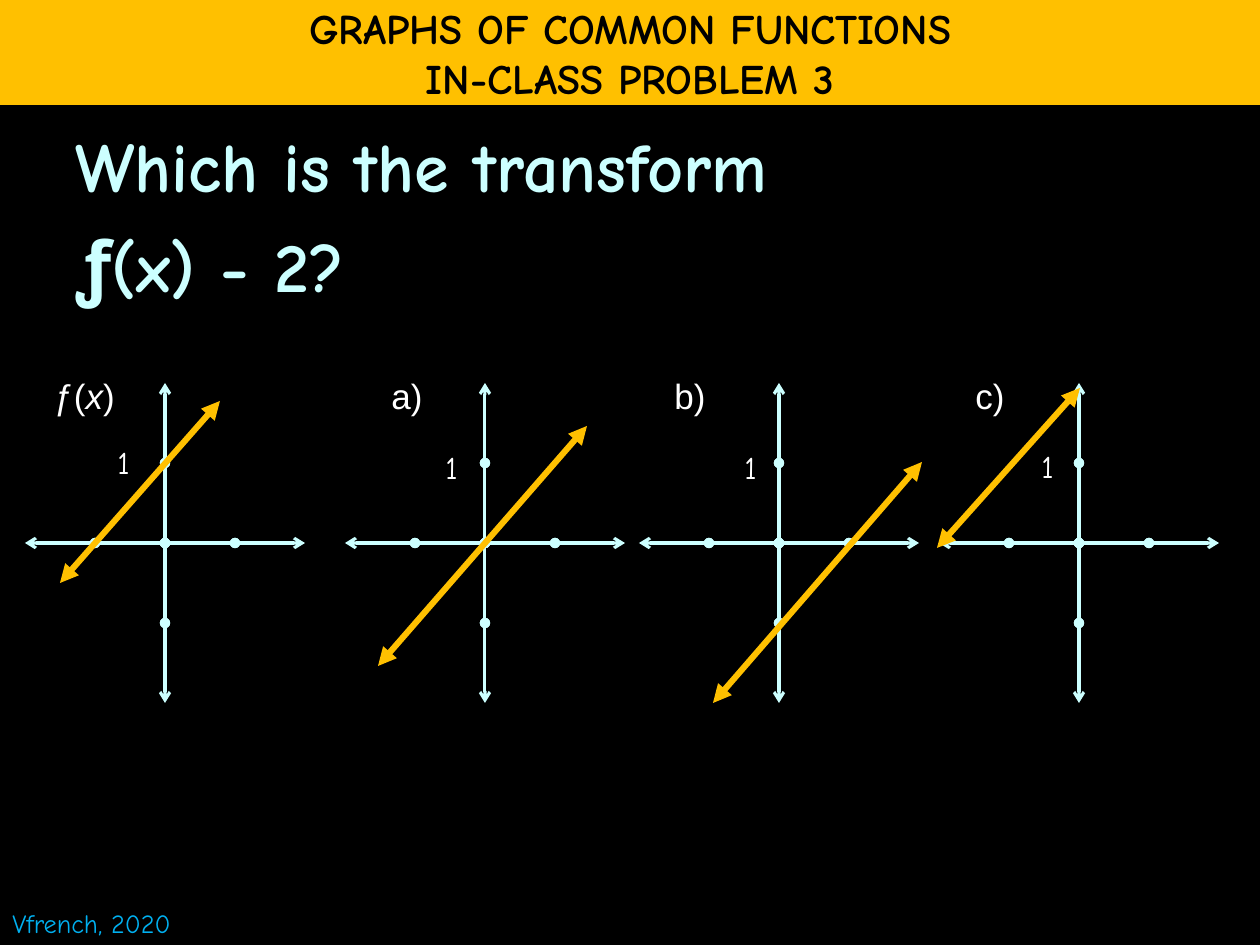
from dataclasses import dataclass
from typing import Any

from lxml.etree import SubElement
from pptx import Presentation
from pptx.dml.color import RGBColor
from pptx.enum.shapes import MSO_CONNECTOR as Link
from pptx.enum.text import MSO_ANCHOR as Anchor
from pptx.enum.text import MSO_AUTO_SIZE as Fit
from pptx.enum.text import PP_ALIGN as Align
from pptx.oxml.ns import qn
from pptx.util import Emu, Pt

BLACK = RGBColor(0x00, 0x00, 0x00)
WHITE = RGBColor(0xFF, 0xFF, 0xFF)
GOLD = RGBColor(0xFF, 0xC0, 0x00)
ICE = RGBColor(0xCC, 0xFF, 0xFF)
BLUE = RGBColor(0x00, 0xB0, 0xF0)

SCALE = 914400 / 126
WIDE, HIGH = 1260, 945
MID_Y = 543
STEP_X, STEP_Y = 70, 80
ARMS = ((-1, 0), (1, 0), (0, -1), (0, 1))

COMIC = {"name": "Comic Neue"}
HEAD = COMIC | {"size": Pt(24), "bold": True}
ASK = COMIC | {"size": Pt(40), "bold": True}
FOOT = COMIC | {"size": Pt(15)}
UNIT = COMIC | {"size": Pt(18)}
LABEL = {"name": "Arial", "size": Pt(20)}

Point = tuple[int, int]
Box = tuple[int, int, int, int]


@dataclass(frozen=True)
class Graph:
    mid: int
    label: tuple[str, ...]  # every second run is italic
    spot: Box
    align: Align
    one: Point
    low: Point
    high: Point


GRAPHS = (
    Graph(165, ("ƒ(", "x", ")"), (42, 368, 118, 59), Align.LEFT,
          (105, 437), (60, 583), (220, 401)),
    Graph(485, ("a)",), (368, 368, 78, 42), Align.CENTER,
          (433, 442), (378, 666), (587, 426)),
    Graph(779, ("b)",), (651, 368, 78, 42), Align.CENTER,
          (732, 442), (713, 703), (922, 462)),
    Graph(1079, ("c)",), (951, 368, 78, 42), Align.CENTER,
          (1029, 441), (937, 548), (1080, 388)),
)


def px(size: float) -> Emu:
    return Emu(round(size * SCALE))


def place(shape: Any, box: Box) -> None:
    shape.left, shape.top, shape.width, shape.height = map(px, box)


def style(font: Any, form: dict, tint: RGBColor) -> None:
    for key, value in form.items():
        setattr(font, key, value)
    font.color.rgb = tint


def write(frame: Any, lines: tuple[tuple[str, ...], ...], form: dict,
          tint: RGBColor, align: Align = Align.LEFT) -> None:
    """Fill a frame with lines of runs; every second run is italic."""
    for row, parts in enumerate(lines):
        para = frame.add_paragraph() if row else frame.paragraphs[0]
        para.alignment = align
        for col, part in enumerate(parts):
            run = para.add_run()
            run.text = part
            style(run.font, form, tint)
            if col % 2:
                run.font.italic = True


def add_text(slide: Any, box: Box, parts: tuple[str, ...], form: dict,
             tint: RGBColor, align: Align = Align.LEFT,
             wrap: bool = True) -> None:
    frame = slide.shapes.add_textbox(*map(px, box)).text_frame
    frame.word_wrap = wrap
    write(frame, (parts,), form, tint, align)


def add_line(slide: Any, start: Point, stop: Point, tint: RGBColor,
             width: float, head: str, tail: str) -> None:
    link = slide.shapes.add_connector(
        Link.STRAIGHT, *map(px, start + stop))
    link.line.color.rgb = tint
    link.line.width = Pt(width)
    line = link.line._get_or_add_ln()
    for tag, kind in (("a:headEnd", head), ("a:tailEnd", tail)):
        SubElement(line, qn(tag), type=kind)
    SubElement(link._element.spPr, qn("a:effectLst"))


def add_graph(slide: Any, graph: Graph) -> None:
    for dx, dy in ARMS:
        spots = [(graph.mid + n * dx * STEP_X, MID_Y + n * dy * STEP_Y)
                 for n in range(3)]
        for start, stop, tail in zip(spots, spots[1:], ("oval", "arrow")):
            add_line(slide, start, stop, ICE, 1.75, "oval", tail)
    add_line(slide, graph.low, graph.high, GOLD, 3.5,
             "triangle", "triangle")
    add_text(slide, graph.spot, graph.label, LABEL, WHITE, graph.align)
    add_text(slide, graph.one + (50, 50), ("1",), UNIT, WHITE)


def add_title(slide: Any) -> None:
    title = slide.shapes.title
    place(title, (0, 0, WIDE, 105))
    title.fill.solid()
    title.fill.fore_color.rgb = GOLD
    frame = title.text_frame
    frame.auto_size = Fit.NONE
    frame.vertical_anchor = Anchor.MIDDLE
    write(frame, (("GRAPHS OF COMMON FUNCTIONS",), ("IN-CLASS PROBLEM 3",)),
          HEAD, BLACK, Align.CENTER)


def add_body(slide: Any) -> None:
    body = slide.placeholders[1]
    place(body, (63, 116, 1134, 777))
    frame = body.text_frame
    frame.auto_size = Fit.NONE
    write(frame, (("Which is the transform",), ("ƒ(x) - 2?",)), ASK, ICE)
    for para in frame.paragraphs:
        para.space_before = Pt(9)
        props = para._p.get_or_add_pPr()
        props.set("marL", "0")
        props.set("indent", "0")
        SubElement(props, qn("a:buNone"))


def main() -> None:
    deck = Presentation()
    deck.slide_width, deck.slide_height = px(WIDE), px(HIGH)
    slide = deck.slides.add_slide(deck.slide_layouts[1])
    slide.background.fill.solid()
    slide.background.fill.fore_color.rgb = BLACK
    add_title(slide)
    add_body(slide)
    add_text(slide, (0, 901, 207, 44), ("Vfrench, 2020",), FOOT, BLUE,
             wrap=False)
    for graph in GRAPHS:
        add_graph(slide, graph)
    deck.save("out.pptx")


if __name__ == "__main__":
    main()
